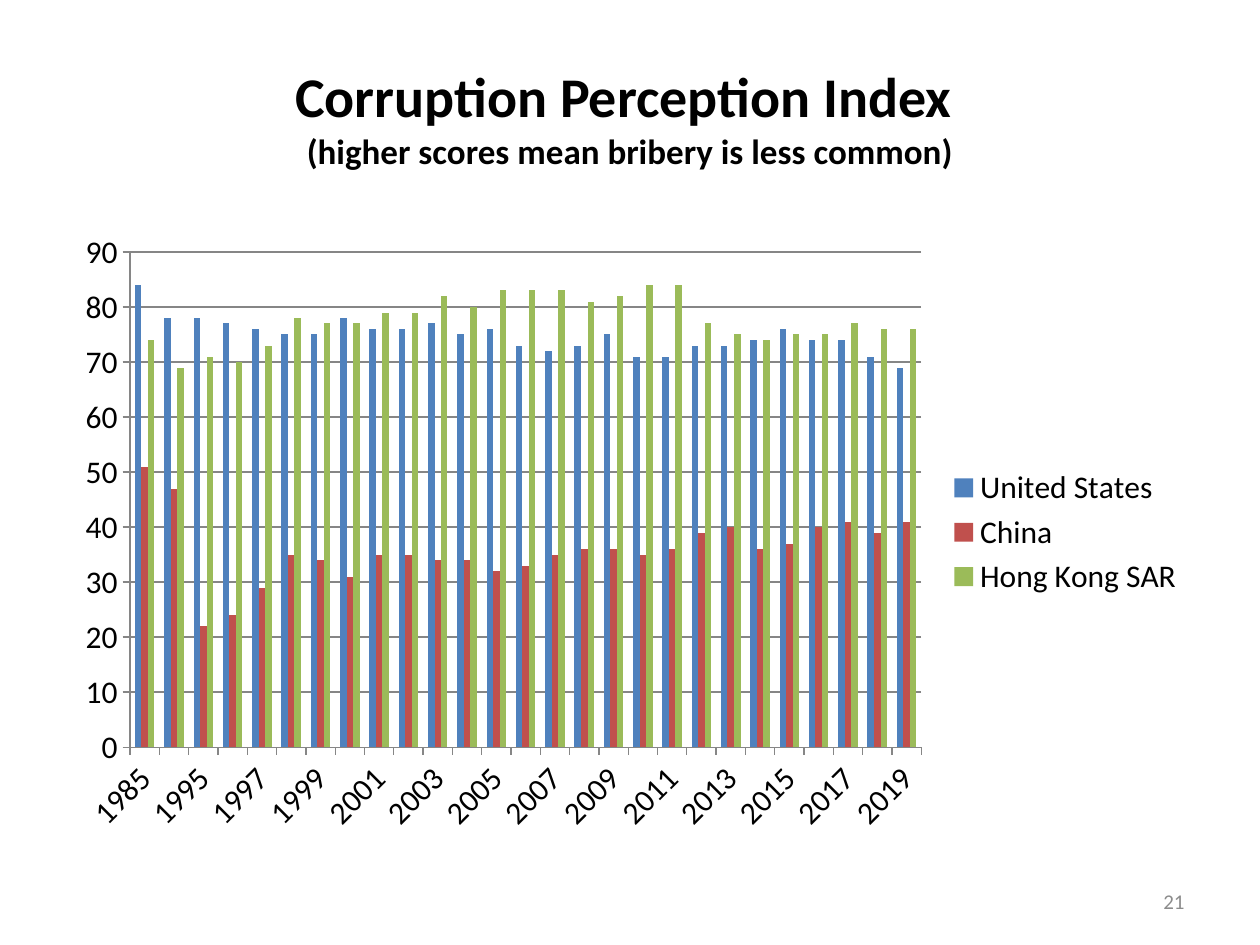
from pptx import Presentation
from pptx import util as u
from pptx.chart.data import CategoryChartData
from pptx.dml.color import RGBColor
from pptx.enum import chart as charts, text

COLORS = {
    "ink": "000000",
    "number": "8C8C8C",
    "grid": "868686",
    "United States": "4F81BD",
    "China": "C0504D",
    "Hong Kong SAR": "9BBB59",
}
FONT = "Calibri"
YEARS = [1985, 1992, *range(1995, 2020)]
SCORES = {
    "United States": [84, 78, 78, 77, 76, 75, 75, 78, 76, 76, 77, 75, 76, 73,
                      72, 73, 75, 71, 71, 73, 73, 74, 76, 74, 74, 71, 69],
    "China": [51, 47, 22, 24, 29, 35, 34, 31, 35, 35, 34, 34, 32, 33,
              35, 36, 36, 35, 36, 39, 40, 36, 37, 40, 41, 39, 41],
    "Hong Kong SAR": [74, 69, 71, 70, 73, 78, 77, 77, 79, 79, 82, 80, 83, 83,
                      83, 81, 82, 84, 84, 77, 75, 74, 75, 75, 77, 76, 76],
}


def color(name):
    return RGBColor.from_string(COLORS[name])


def set_font(font, size, ink="ink", bold=False):
    values = {"name": FONT, "size": u.Pt(size), "bold": bold}
    for key, value in values.items():
        setattr(font, key, value)
    font.color.rgb = color(ink)


def add_text(page, place, lines, align, **style):
    """Add one paragraph whose lines are (wording, point size) pairs."""
    box = page.shapes.add_textbox(*map(u.Inches, place))
    frame = box.text_frame
    frame.word_wrap = True
    frame.vertical_anchor = text.MSO_ANCHOR.MIDDLE
    para = frame.paragraphs[0]
    para.alignment = align
    for index, (wording, size) in enumerate(lines):
        if index:
            para.add_line_break()
        span = para.add_run()
        span.text = wording
        set_font(span.font, size, **style)


def format_line(line):
    line.color.rgb = color("grid")
    line.width = u.Pt(0.75)


def add_score_chart(page, place):
    data = CategoryChartData(number_format="General")
    data.categories = [str(year) for year in YEARS]
    for name, values in SCORES.items():
        data.add_series(name, values)
    chart = page.shapes.add_chart(
        charts.XL_CHART_TYPE.COLUMN_CLUSTERED, *map(u.Inches, place), data
    ).chart
    set_font(chart.font, 18)
    chart.has_title = False
    chart.has_legend = True
    chart.legend.position = charts.XL_LEGEND_POSITION.RIGHT
    chart.legend.include_in_layout = False

    plot = chart.plots[0]
    plot.gap_width = 150
    plot.vary_by_categories = False
    for series in plot.series:
        series.format.fill.solid()
        series.format.fill.fore_color.rgb = color(series.name)
        series.invert_if_negative = False

    for axis in (chart.category_axis, chart.value_axis):
        axis.major_tick_mark = charts.XL_TICK_MARK.OUTSIDE
        axis.minor_tick_mark = charts.XL_TICK_MARK.NONE
        format_line(axis.format.line)
    chart.value_axis.has_major_gridlines = True
    format_line(chart.value_axis.major_gridlines.format.line)


def main():
    deck = Presentation()
    deck.slide_width, deck.slide_height = u.Inches(10), u.Inches(7.5)
    page = deck.slides.add_slide(deck.slide_layouts[6])
    add_text(
        page, (0.5, 0.3, 9, 1.25),
        [("Corruption Perception Index ", 32),
         ("(higher scores mean bribery is less common)", 20)],
        text.PP_ALIGN.CENTER, bold=True,
    )
    add_score_chart(page, (0.5, 1.75, 9, 4.95))
    add_text(page, (7.17, 6.95, 2.33, 0.4), [("21", 12)],
             text.PP_ALIGN.RIGHT, ink="number")
    deck.save("out.pptx")


if __name__ == "__main__":
    main()
